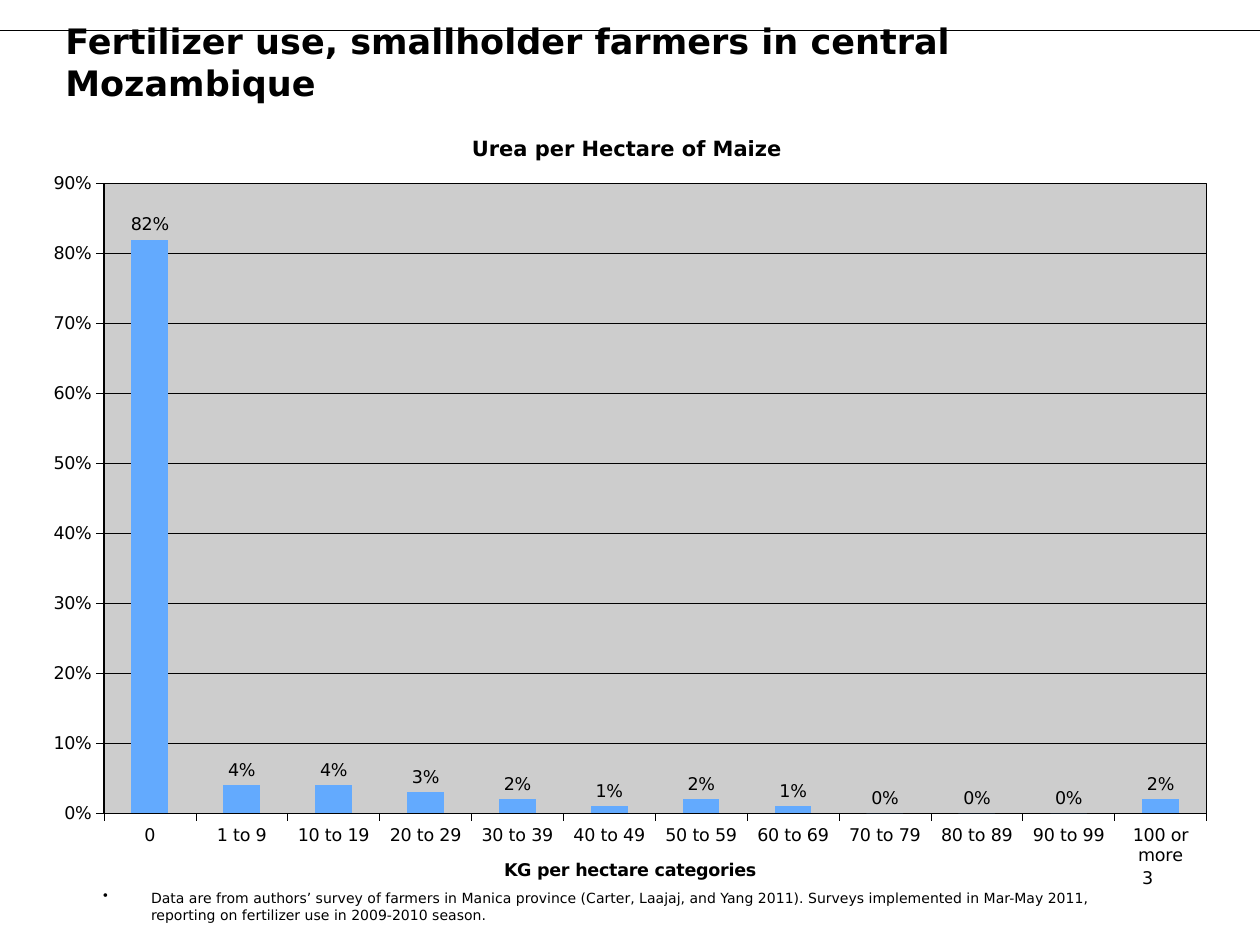
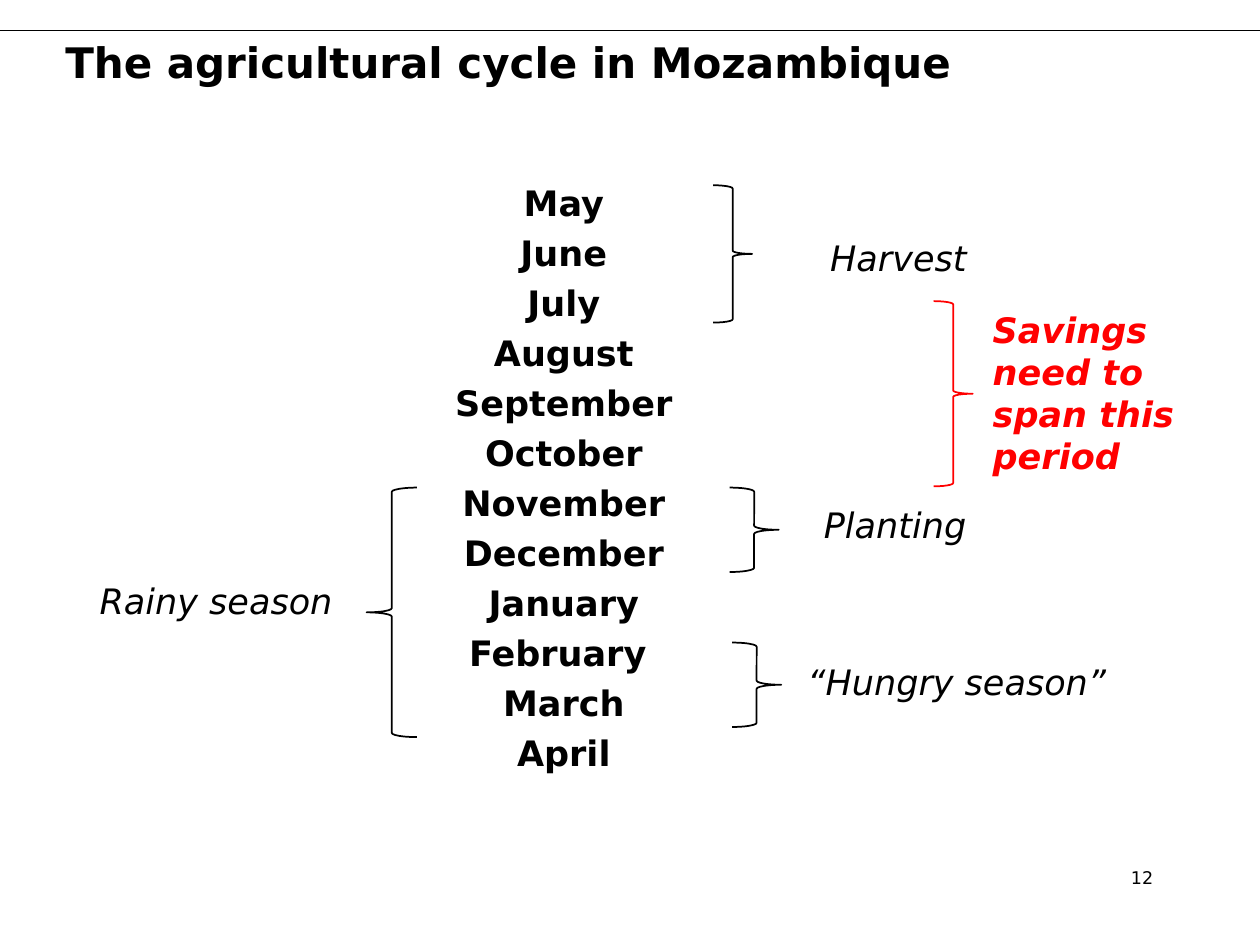
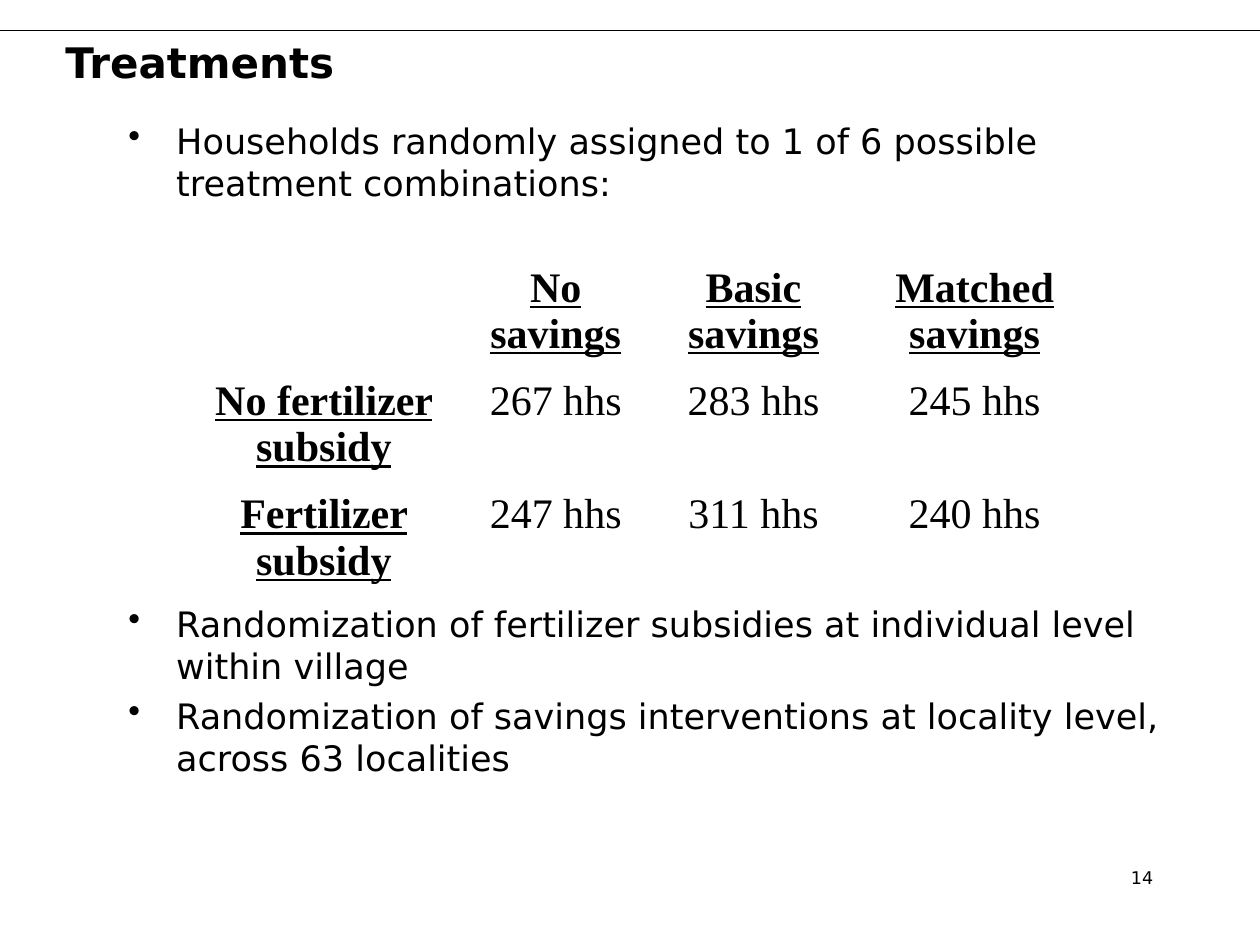
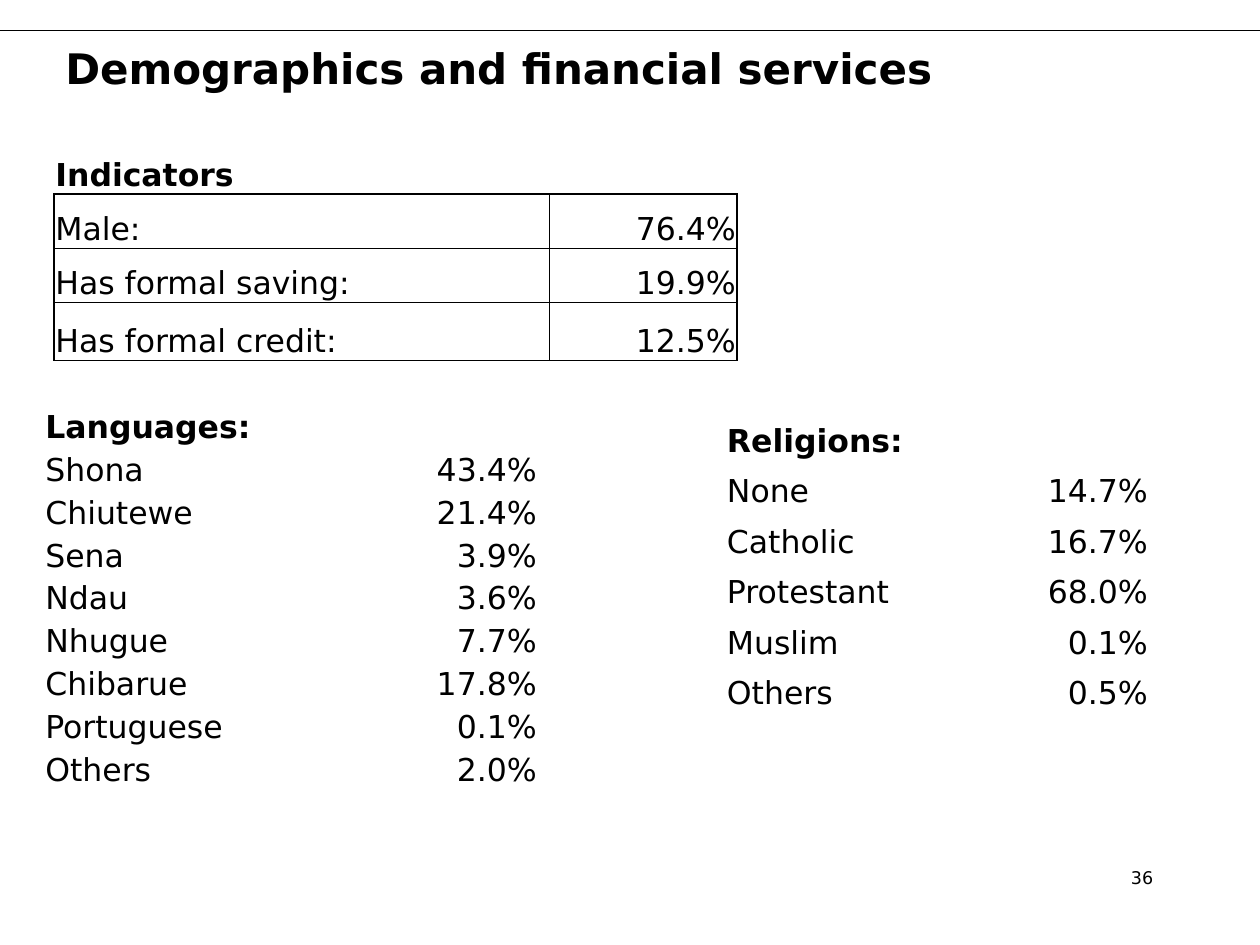
from dataclasses import dataclass

from lxml import etree
from pptx import Presentation
from pptx import util as u
from pptx.chart.data import CategoryChartData
from pptx.dml.color import RGBColor
from pptx.enum import chart, shapes, text
from pptx.oxml import parse_xml
from pptx.oxml.ns import nsdecls, qn


@dataclass(frozen=True)
class Theme:
    ink: str = "000000"
    accent: str = "FF0000"
    paper: str = "FFFFFF"
    bar: str = "63AAFE"
    plot: str = "CDCDCD"
    sans: str = "DejaVu Sans"
    serif: str = "Times New Roman"
    title: int = 24
    body: int = 20
    table: int = 18
    chart_title: int = 12
    small: int = 10
    note: int = 8
    table_style: str = "{2D5ABB26-0587-4C30-8999-92F81FD0307C}"


T = Theme()
INK = RGBColor.from_string(T.ink)
LEFT, CENTER, RIGHT = text.PP_ALIGN.LEFT, text.PP_ALIGN.CENTER, text.PP_ALIGN.RIGHT


def add_text(s, box, lines, size, bold=False, italic=False, color=T.ink,
             align=LEFT, anchor=text.MSO_ANCHOR.TOP, indent=0, bullet=False):
    tf = s.shapes.add_textbox(*map(u.Inches, box)).text_frame
    tf.word_wrap = True
    tf.vertical_anchor = anchor
    for i, line in enumerate(lines):
        p = tf.paragraphs[0] if i == 0 else tf.add_paragraph()
        p.text = line
        p.alignment = align
        p.space_before = u.Pt(round(size * 0.23, 1) if i else 0)
        p.font.name, p.font.size = T.sans, u.Pt(size)
        p.font.bold, p.font.italic = bold, italic
        p.font.color.rgb = RGBColor.from_string(color)
        pPr = p._p.get_or_add_pPr()
        pPr.set("marL", str(u.Inches(indent)))
        pPr.set("indent", str(u.Inches(-indent if bullet else 0)))
        if bullet:
            pPr.find(qn("a:defRPr")).addprevious(
                parse_xml(f'<a:buChar {nsdecls("a")} char="•"/>'))


def add_grid(s, at, cols, rows, data, size, font=T.sans, centered=False, edges=None):
    left, top = at
    box = map(u.Inches, (left, top, sum(cols), sum(rows)))
    tbl = s.shapes.add_table(len(rows), len(cols), *box).table
    tbl.first_row = tbl.horz_banding = False
    tbl._tbl.tblPr.find(qn("a:tableStyleId")).text = T.table_style
    for column, width in zip(tbl.columns, cols):
        column.width = u.Inches(width)
    for r, height in enumerate(rows):
        tbl.rows[r].height = u.Inches(height)
        for c in range(len(cols)):
            cell = tbl.cell(r, c)
            if not centered:
                cell.vertical_anchor = text.MSO_ANCHOR.BOTTOM
                cell.margin_left = cell.margin_right = cell.margin_top = u.Inches(0.01)
                cell.margin_bottom = 0
            color, widths = edges(r, c) if edges else (None, ())
            for side, width in zip("LRTB", widths):
                cell._tc.get_or_add_tcPr().append(parse_xml(
                    f'<a:ln{side} {nsdecls("a")} w="{u.Pt(width)}"><a:solidFill>'
                    f'<a:srgbClr val="{color}"/></a:solidFill></a:ln{side}>'))
            cell.fill.background()
            p = cell.text_frame.paragraphs[0]
            p.text = data[r][c]
            head = r == 0 or (centered and c == 0)
            p.alignment = CENTER if centered else RIGHT if c else LEFT
            p.font.name, p.font.size, p.font.color.rgb = font, u.Pt(size), INK
            p.font.bold, p.font.underline = head, head and centered
    return tbl


prs = Presentation()
prs.slide_width, prs.slide_height = u.Inches(10), u.Inches(7.5)

titles = [
    ("Fertilizer use, smallholder farmers in central Mozambique", 9.26, 0.5, T.body, "3"),
    ("The agricultural cycle in Mozambique", 8.5, 0.5, T.title, "12"),
    ("Treatments", 8.5, 0.5, T.title, "14"),
    ("Demographics and financial services", 8.5, 0.59, T.title, "36"),
]
slides = []
for title, width, height, size, number in titles:
    s = prs.slides.add_slide(prs.slide_layouts[6])
    rule = s.shapes.add_connector(shapes.MSO_CONNECTOR.STRAIGHT, 0, u.Inches(0.24),
                                  u.Inches(10), u.Inches(0.24))
    rule.line.color.rgb, rule.line.width = INK, u.Pt(0.75)
    etree.SubElement(rule._element.spPr, qn("a:effectLst"))
    add_text(s, (0.42, 0.24, width, height), [title], size, bold=True,
             anchor=text.MSO_ANCHOR.MIDDLE)
    add_text(s, (7.17, 6.83, 2.08, 0.5), [number], T.small, align=RIGHT)
    slides.append(s)
usage, cycle, treatments, demographics = slides

cd = CategoryChartData(number_format="0%")
cd.categories = ["0", *(f"{n or 1} to {n + 9}" for n in range(0, 100, 10)), "100 or more"]
cd.add_series("Series 1", (0.82, 0.04, 0.04, 0.03, 0.02, 0.01, 0.02, 0.01, 0, 0, 0, 0.02))
ch = usage.shapes.add_chart(chart.XL_CHART_TYPE.COLUMN_CLUSTERED,
                            *map(u.Inches, (0.28, 0.86, 9.39, 6.17)), cd).chart
ch.has_legend = False
ch.font.name, ch.font.size, ch.font.color.rgb = T.sans, u.Pt(T.small), INK
ch.has_title = True
ch.category_axis.has_title = True
for holder, caption, size in (
        (ch.chart_title, "Urea per Hectare of Maize", T.chart_title),
        (ch.category_axis.axis_title, "KG per hectare categories", T.small)):
    p = holder.text_frame.paragraphs[0]
    p.text = caption
    p.font.name, p.font.size, p.font.bold = T.sans, u.Pt(size), True
    p.font.color.rgb = INK
ch.chart_title.include_in_layout = False

va = ch.value_axis
va.minimum_scale, va.maximum_scale, va.major_unit = 0, 0.9, 0.1
va.tick_labels.number_format = "0%"
va.tick_labels.number_format_is_linked = False
for axis in (ch.category_axis, va):
    axis.major_tick_mark = chart.XL_TICK_MARK.OUTSIDE
    axis.minor_tick_mark = chart.XL_TICK_MARK.NONE
    axis.tick_labels.font.size = u.Pt(T.small)
for line in (ch.category_axis.format.line, va.format.line, va.major_gridlines.format.line):
    line.color.rgb, line.width = INK, u.Pt(0.25)

plot = ch.plots[0]
plot.gap_width = 150
plot.vary_by_categories = False
fill = plot.series[0].format.fill
fill.solid()
fill.fore_color.rgb = RGBColor.from_string(T.bar)
plot.has_data_labels = True
labels = plot.data_labels
labels.show_value = True
labels.number_format, labels.number_format_is_linked = "0%", False
labels.position = chart.XL_LABEL_POSITION.OUTSIDE_END
labels.font.name, labels.font.size, labels.font.color.rgb = T.sans, u.Pt(T.small), INK

area = ch._chartSpace.chart.plotArea
for old in area.findall(qn("c:layout")):
    area.remove(old)
frame = "".join(f'<c:{k} val="{v}"/>' for k, v in (
    ("layoutTarget", "inner"), ("xMode", "edge"), ("yMode", "edge"),
    ("x", 0.058), ("y", 0.097), ("w", 0.932), ("h", 0.81)))
area.insert(0, parse_xml(
    f'<c:layout {nsdecls("c")}><c:manualLayout>{frame}</c:manualLayout></c:layout>'))
area.append(parse_xml(
    f'<c:spPr {nsdecls("c", "a")}><a:solidFill><a:srgbClr val="{T.plot}"/></a:solidFill>'
    f'<a:ln w="{u.Pt(0.75)}"><a:solidFill><a:srgbClr val="{T.ink}"/></a:solidFill></a:ln>'
    '</c:spPr>'))
add_text(usage, (0.72, 7.01, 8.42, 0.34),
         ["Data are from authors’ survey of farmers in Manica province (Carter, Laajaj, and "
          "Yang 2011). Surveys implemented in Mar-May 2011, reporting on fertilizer use in "
          "2009-2010 season."], T.note, indent=0.38, bullet=True)

months = ["May", "June", "July", "August", "September", "October", "November",
          "December", "January", "February ", "March", "April"]
add_text(cycle, (3.25, 1.39, 2.45, 4.75), months, T.body, bold=True, align=CENTER)
LB, RB = shapes.MSO_SHAPE.LEFT_BRACE, shapes.MSO_SHAPE.RIGHT_BRACE
for kind, brace, color, label, box, style in [
    (LB, (2.91, 3.87, 0.4, 1.98), T.ink, "Rainy season", (0.49, 4.55, 2.45, 0.59),
     {"align": CENTER}),
    (RB, (5.66, 1.47, 0.31, 1.09), T.ink, "Harvest", (6.49, 1.83, 2.45, 0.59), {}),
    (RB, (5.79, 3.87, 0.39, 0.67), T.ink, "Planting", (6.44, 3.95, 2.45, 0.59), {}),
    (RB, (7.41, 2.39, 0.31, 1.47), T.accent, "Savings need to span this period",
     (7.4, 2.4, 2.25, 0.59), {"bold": True, "indent": 0.38}),
    (RB, (5.81, 5.1, 0.39, 0.67), T.ink, "“Hungry season”", (6.31, 5.19, 2.6, 0.59), {}),
]:
    sp = cycle.shapes.add_shape(kind, *map(u.Inches, brace))
    sp.shadow.inherit = False
    sp.fill.background()
    sp.line.color.rgb, sp.line.width = RGBColor.from_string(color), u.Pt(1)
    add_text(cycle, box, [label], T.body, italic=True, color=color, **style)

add_text(treatments, (0.92, 0.9, 8.55, 0.85),
         ["Households randomly assigned to 1 of 6 possible treatment combinations:"],
         T.body, indent=0.38, bullet=True)
add_text(treatments, (0.92, 4.73, 8.55, 1.97),
         ["Randomization of fertilizer subsidies at individual level within village",
          "Randomization of savings interventions at locality level, across 63 localities"],
         T.body, indent=0.38, bullet=True)
add_grid(treatments, (1.52, 2.05), (2.1, 1.58, 1.56, 1.95), [0.83] * 3, [
    ("", "No savings", "Basic savings", "Matched savings"),
    ("No fertilizer subsidy", "267 hhs", "283 hhs", "245 hhs"),
    ("Fertilizer subsidy", "247 hhs", "311 hhs", "240 hhs"),
], T.title, T.serif, centered=True,
    edges=lambda r, c: (T.paper, (1, 1, 1, 1 if r else 3)))

indicators = add_grid(
    demographics, (0.43, 1.07), (3.93, 1.49), (0.47, 0.43, 0.43, 0.46),
    [("Indicators", ""), ("Male:", "76.4%"), ("Has formal saving:", "19.9%"),
     ("Has formal credit:", "12.5%")], T.table,
    edges=lambda r, c: (T.ink, (0.5 if c else 1, 1 if c else 0.5,
                                1 if r == 1 else 0.5, 1 if r == 3 else 0.5) if r else ()))
indicators.cell(0, 0).merge(indicators.cell(0, 1))
add_grid(demographics, (0.35, 3.2), (2.89, 1.03), [0.34] * 9, [
    ("Languages:", ""), ("Shona", "43.4%"), ("Chiutewe", "21.4%"), ("Sena", "3.9%"),
    ("Ndau", "3.6%"), ("Nhugue", "7.7%"), ("Chibarue", "17.8%"),
    ("Portuguese", "0.1%"), ("Others", "2.0%")], T.table)
add_grid(demographics, (5.76, 3.25), (1.71, 1.65), [0.4] * 6, [
    ("Religions:", ""), ("None", "14.7%"), ("Catholic", "16.7%"),
    ("Protestant", "68.0%"), ("Muslim", "0.1%"), ("Others", "0.5%")], T.table)

prs.save("out.pptx")
